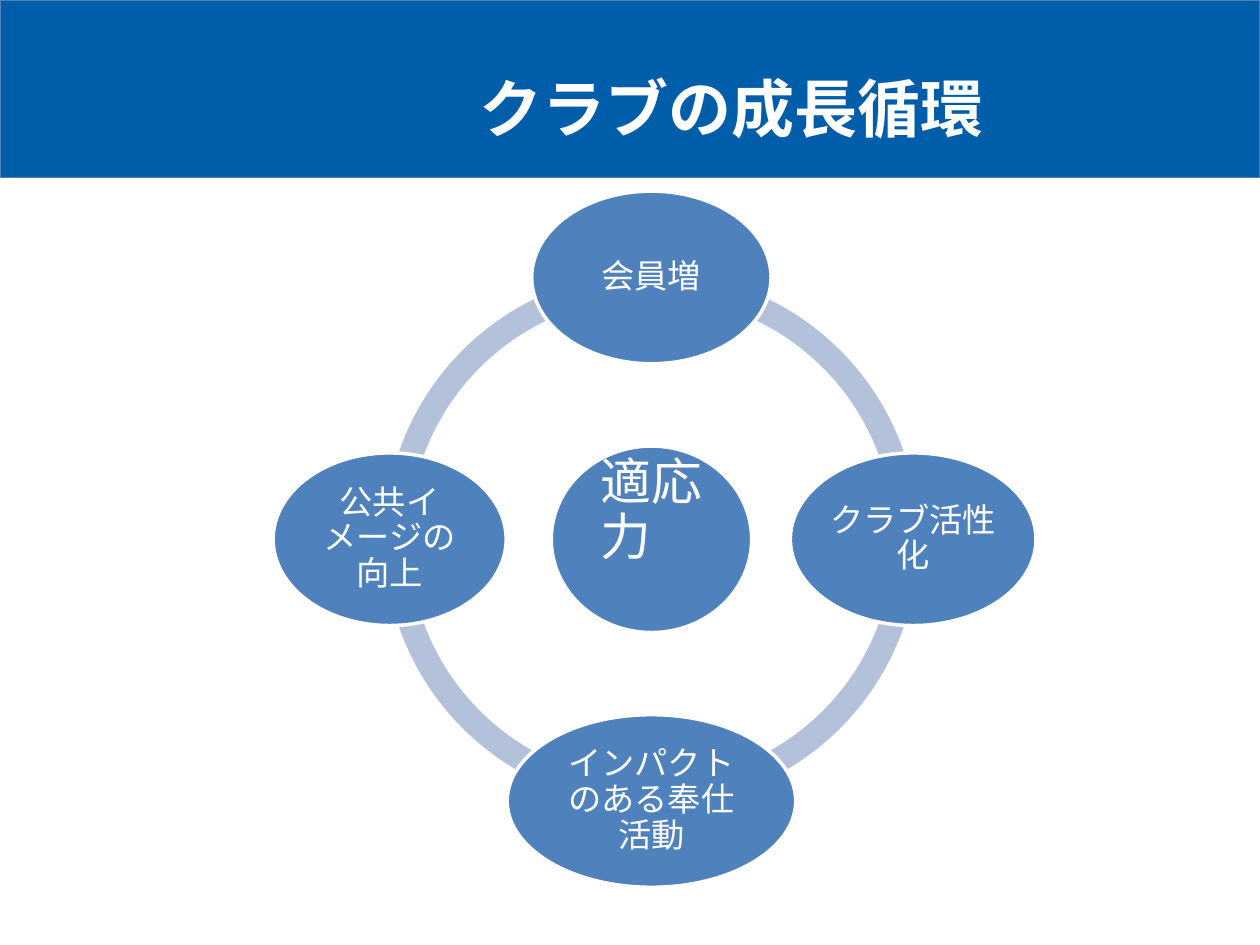
import math
from dataclasses import dataclass

import pptx
import pptx.dml.color
import pptx.enum.shapes
import pptx.enum.text
import pptx.util

Inches = pptx.util.Inches
Shape = pptx.enum.shapes.MSO_SHAPE
Align = pptx.enum.text.PP_ALIGN


@dataclass(frozen=True)
class Theme:
    banner: str = "005DAA"
    node: str = "4F81BD"
    ring: str = "B3C1DB"
    white: str = "FFFFFF"
    title_font: str = "Arial Narrow"
    body_font: str = "Calibri"
    title_size: int = 36
    hub_size: int = 29
    node_size: int = 19


THEME = Theme()
WIDTH, HEIGHT = 10, 7.5
NODES = [  # label, ellipse width, clockwise from the top
    ("会員増", 1.9),
    ("クラブ活性化", 1.95),
    ("インパクトのある奉仕活動", 2.29),
    ("公共イメージの向上", 1.85),
]


def rgb(value):
    return pptx.dml.color.RGBColor.from_string(value)


def add_shape(slide, kind, box, fill, line=None, line_width=0):
    sp = slide.shapes.add_shape(kind, *(Inches(v) for v in box))
    sp.shadow.inherit = False
    sp.fill.solid()
    sp.fill.fore_color.rgb = rgb(fill)
    if line:
        sp.line.color.rgb = rgb(line)
        sp.line.width = pptx.util.Pt(line_width)
    else:
        sp.line.fill.background()
    return sp


def write(sp, text, font, size, spacing, align, indent=0, bold=False):
    tf = sp.text_frame
    tf.word_wrap = True
    tf.vertical_anchor = pptx.enum.text.MSO_ANCHOR.MIDDLE
    tf.text = text
    p = tf.paragraphs[0]
    p.alignment = align
    p.line_spacing = spacing
    if indent:
        pPr = p._p.get_or_add_pPr()
        pPr.set("marL", str(Inches(indent)))
        pPr.set("indent", "0")
    r = p.runs[0]
    r.font.name = font
    r.font.size = pptx.util.Pt(size)
    r.font.bold = bold
    r.font.color.rgb = rgb(THEME.white)


def add_banner(slide, box):
    x, y, w, h = box
    add_shape(slide, Shape.RECTANGLE, box, THEME.banner, THEME.node, 0.75)
    title_box = (x + 0.021 * w, y + 0.44 * h, 0.959 * w, 0.41 * h)
    title = slide.shapes.add_textbox(*(Inches(v) for v in title_box))
    write(title, "クラブの成長循環", THEME.title_font, THEME.title_size,
          0.8, Align.LEFT, indent=3.5, bold=True)


def add_ellipse(slide, cx, cy, w, h, inset):
    box = (cx - w / 2, cy - h / 2, w, h)
    sp = add_shape(slide, Shape.OVAL, box, THEME.node, THEME.white, 2)
    tf = sp.text_frame
    tf.margin_left = tf.margin_right = Inches(inset)
    tf.margin_top = tf.margin_bottom = Inches(inset)
    return sp


def add_cycle(slide, box):
    """Ring of quarter arcs with a hub and evenly spaced nodes."""
    x, y, w, h = box
    cx, cy = x + w / 2, y + h / 2
    radius = 0.49 * w
    step = 360 / len(NODES)

    for i in range(len(NODES)):
        arc = add_shape(slide, Shape.BLOCK_ARC, box, THEME.ring)
        # Angles are stored in 60000ths of a degree, scaled by 100000.
        arc.adjustments[0] = i * step * 0.6
        arc.adjustments[1] = (i + 1) * step % 360 * 0.6
        arc.adjustments[2] = 0.046

    hub = add_ellipse(slide, cx, cy, 1.59, 1.48, 0.04)
    hub.text_frame.margin_bottom = Inches(0.48)  # lifts the label
    write(hub, "適応力", THEME.body_font, THEME.hub_size, 0.9, Align.LEFT,
          indent=0.12)

    for i, (label, width) in enumerate(NODES):
        angle = math.radians(i * step - 90)
        node = add_ellipse(slide, cx + radius * math.cos(angle),
                           cy + radius * math.sin(angle), width, 1.37, 0.03)
        write(node, label, THEME.body_font, THEME.node_size, 0.9, Align.CENTER)


def main():
    prs = pptx.Presentation()
    prs.slide_width, prs.slide_height = Inches(WIDTH), Inches(HEIGHT)
    slide = prs.slides.add_slide(prs.slide_layouts[6])
    add_banner(slide, (0, 0, WIDTH, 1.41))
    add_cycle(slide, (3.05, 2.16, 4.24, 4.24))
    prs.save("out.pptx")


if __name__ == "__main__":
    main()
